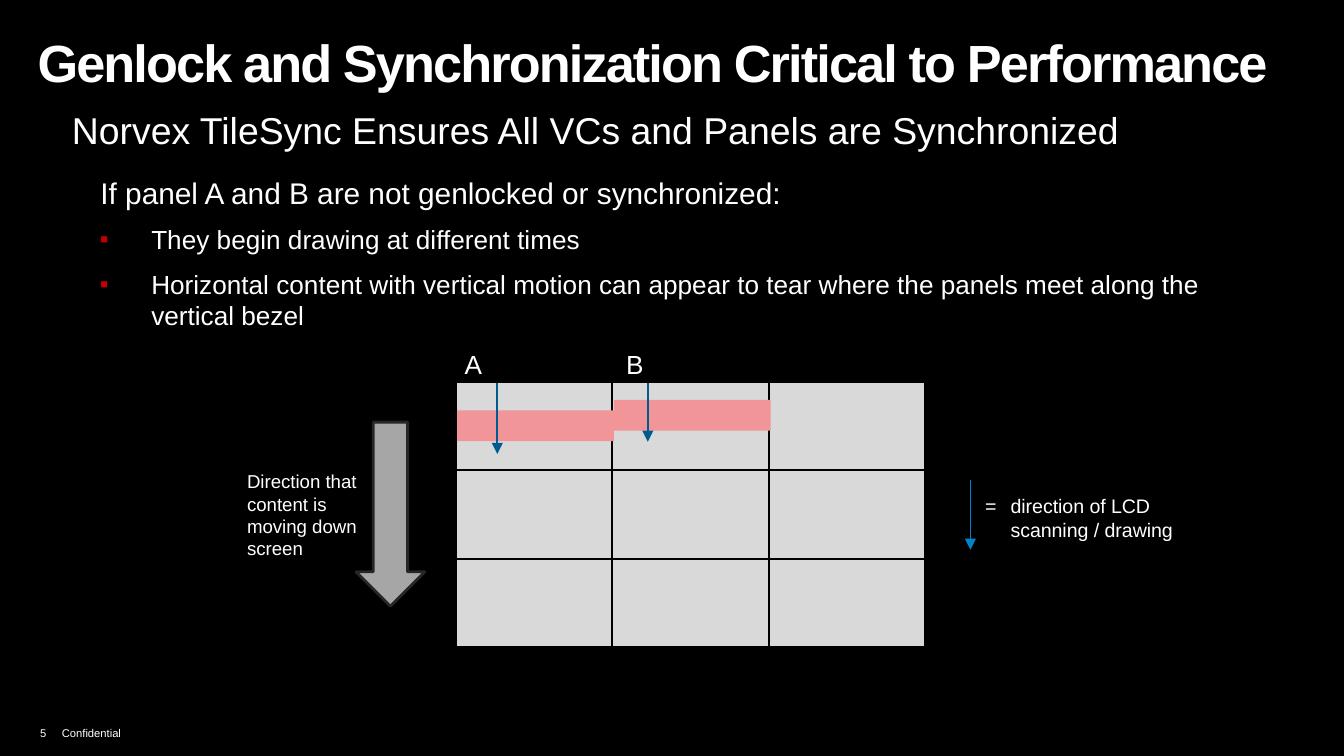
from lxml import etree
from pptx import Presentation
from pptx.dml.color import RGBColor
from pptx.enum.shapes import MSO_CONNECTOR, MSO_SHAPE
from pptx.enum.text import MSO_ANCHOR
from pptx.oxml.ns import qn
from pptx.util import Cm, Pt

STRAIGHT = MSO_CONNECTOR.STRAIGHT
RECTANGLE = MSO_SHAPE.RECTANGLE
DOWN_ARROW = MSO_SHAPE.DOWN_ARROW
BOTTOM = MSO_ANCHOR.BOTTOM

BLACK = RGBColor(0x00, 0x00, 0x00)
WHITE = RGBColor(0xFF, 0xFF, 0xFF)
BULLET_RED = RGBColor(0xC0, 0x00, 0x00)
PANEL_GREY = RGBColor(0xD9, 0xD9, 0xD9)
ARROW_GREY = RGBColor(0xA6, 0xA6, 0xA6)
ARROW_EDGE = RGBColor(0x26, 0x26, 0x26)
CONTENT_PINK = RGBColor(0xF1, 0x95, 0x98)
SCAN_BLUE = RGBColor(0x00, 0x5B, 0x8E)
LEGEND_BLUE = RGBColor(0x00, 0x83, 0xCB)

FONT = "Arial"
THIN = Pt(0.94)
HANGING = Cm(0.97)


def style_text(para, size, bold=False):
    for span in para.runs:
        span.font.name = FONT
        span.font.size = Pt(size)
        span.font.bold = bold
        span.font.color.rgb = WHITE


def add_text(shapes, box, text, size, bold=False):
    text_box = shapes.add_textbox(*map(Cm, box))
    frame = text_box.text_frame
    frame.word_wrap = True
    frame.text = text
    style_text(frame.paragraphs[0], size, bold)
    return frame


def set_indent(para, left, first=0):
    properties = para._p.get_or_add_pPr()
    properties.set("marL", str(left))
    properties.set("indent", str(first))
    return properties


def add_tab(para, position):
    tabs = etree.SubElement(para._p.get_or_add_pPr(), qn("a:tabLst"))
    etree.SubElement(tabs, qn("a:tab"), pos=str(position), algn="l")


def add_bullet(para):
    properties = set_indent(para, Cm(1.14), -HANGING)
    color = etree.SubElement(properties, qn("a:buClr"))
    etree.SubElement(color, qn("a:srgbClr"), val=str(BULLET_RED))
    etree.SubElement(properties, qn("a:buSzPct"), val="95000")
    etree.SubElement(properties, qn("a:buFont"), typeface=FONT)
    etree.SubElement(properties, qn("a:buChar"), char="▪")


def add_line(shapes, start, end, color, arrow=False):
    line = shapes.add_connector(STRAIGHT, *map(Cm, start + end))
    line.line.color.rgb = color
    line.line.width = THIN
    etree.SubElement(line._element.spPr, qn("a:effectLst"))
    if arrow:
        etree.SubElement(line.line._get_or_add_ln(), qn("a:tailEnd"), type="triangle")


def add_filled(shapes, preset, box, fill, edge=None):
    shape = shapes.add_shape(preset, *map(Cm, box))
    shape.shadow.inherit = False
    shape.fill.solid()
    shape.fill.fore_color.rgb = fill
    if edge is None:
        shape.line.fill.background()
    else:
        shape.line.color.rgb = edge
        shape.line.width = Pt(1.5)


def add_headings(shapes, title_box, subtitle_box):
    title = add_text(shapes, title_box,
                     "Genlock and Synchronization Critical to Performance", 28, True)
    title.margin_top = Cm(0.2)
    title.paragraphs[0].runs[0].font._element.set("spc", "-100")
    subtitle = add_text(shapes, subtitle_box,
                        "Norvex TileSync Ensures All VCs and Panels are Synchronized", 20)
    set_indent(subtitle.paragraphs[0], Cm(1.14), -HANGING)


def add_explanation(shapes, box):
    frame = add_text(shapes, box, "If panel A and B are not genlocked or synchronized:", 16)
    set_indent(frame.paragraphs[0], Cm(0.18))
    for point in (
        "They begin drawing at different times",
        "Horizontal content with vertical motion can appear to tear "
        "where the panels meet along the vertical bezel",
    ):
        para = frame.add_paragraph()
        para.text = point
        add_bullet(para)
        para.space_before = Pt(7)
        style_text(para, 14)


def add_legend(shapes, box):
    left, top, width, height = box
    group = shapes.add_group_shape().shapes
    add_line(group, (left, top), (left, top + height), LEGEND_BLUE, arrow=True)
    frame = add_text(group, (left + 0.03, top + 0.15, width, 1.14),
                     "=\tdirection of LCD scanning / drawing", 10.5)
    set_indent(frame.paragraphs[0], Cm(0.48), -Cm(0.48))


def add_video_wall(shapes, box, count=3):
    """Draw a square grid of panels, with panels A and B out of step."""
    left, top, width, height = box
    panel_width, panel_height = width / count, height / count
    add_filled(shapes, RECTANGLE, box, PANEL_GREY, BLACK)
    for row in range(1, count):
        y = top + row * panel_height
        add_line(shapes, (left, y), (left + width, y), BLACK)
    for column in range(count + 1):
        x = left + column * panel_width
        add_line(shapes, (x, top), (x, top + height), BLACK)

    # name, content offset, scan line x, scan length, label x
    panels = (("A", 0.55, 0.79, 1.37, -0.08), ("B", 0.35, 0.67, 1.14, 0.01))
    for column, (name, drop, scan_x, scan_length, label_x) in enumerate(panels):
        x = left + column * panel_width
        add_filled(shapes, RECTANGLE, (x + 0.03, top + drop, panel_width, 0.58), CONTENT_PINK)
        add_line(shapes, (x + scan_x, top + 0.03), (x + scan_x, top + scan_length),
                 SCAN_BLUE, arrow=True)
        add_text(shapes, (x + label_x, top - 0.75, 3.15, 0.86), name, 14)


def add_motion_note(shapes, box):
    left, top, width, height = box
    add_filled(shapes, DOWN_ARROW, (left + width - 1.3, top, 1.3, height), ARROW_GREY, ARROW_EDGE)
    add_text(shapes, (left, top + 0.78, 3.2, 1.96),
             "Direction that content is moving down screen", 10)


def add_footer(shapes, box):
    frame = add_text(shapes, box, "5\tConfidential", 6)
    frame.vertical_anchor = BOTTOM
    add_tab(frame.paragraphs[0], Cm(0.41))


def main():
    deck = Presentation()
    deck.slide_width, deck.slide_height = Cm(25.4), Cm(14.29)
    page = deck.slides.add_slide(deck.slide_layouts[6])
    page.background.fill.solid()
    page.background.fill.fore_color.rgb = BLACK

    shapes = page.shapes
    add_footer(shapes, (0.51, 13.46, 2.97, 0.64))
    add_explanation(shapes, (1.47, 3.18, 22.73, 2.49))
    add_headings(shapes, (0.46, 0.38, 24.43, 1.3), (0.94, 1.9, 24.1, 1.04))
    add_legend(shapes, (18.34, 9.07, 4.67, 1.32))
    diagram = shapes.add_group_shape().shapes
    add_video_wall(diagram, (8.61, 7.21, 8.89, 5.03))
    add_motion_note(diagram, (4.42, 7.98, 3.61, 3.48))
    deck.save("out.pptx")


if __name__ == "__main__":
    main()
